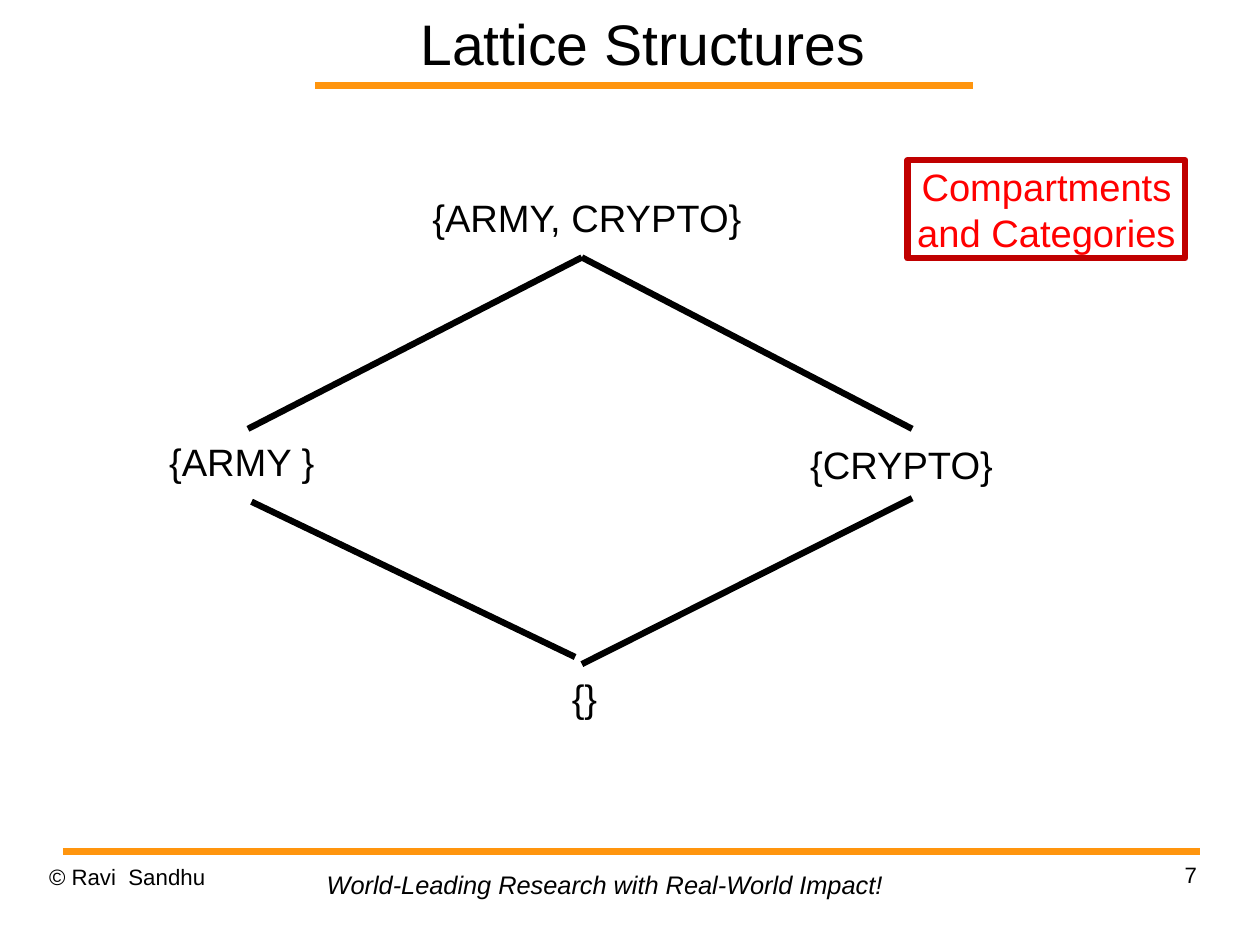
import pptx
import pptx.util
import pptx.dml.color
import pptx.enum.shapes
import pptx.enum.text
import pptx.oxml.ns
from lxml import etree

Cm, Pt = pptx.util.Cm, pptx.util.Pt
ALIGN = pptx.enum.text.PP_ALIGN
COLORS = {"text": "000000", "rule": "FF950E", "border": "C00000", "note": "FF0000"}
TIGHT = (0.18, 0.08)


def rgb(name):
    """Return the named palette colour."""
    return pptx.dml.color.RGBColor.from_string(COLORS[name])


def write(sp, lines, size, align, color="text", italic=False, inset=(0, 0),
          spacing=None, wrap=True, anchor="TOP"):
    """Fill a shape with one paragraph per line."""
    tf = sp.text_frame
    tf.word_wrap = wrap
    tf.vertical_anchor = pptx.enum.text.MSO_ANCHOR[anchor]
    tf.margin_left = tf.margin_right = Cm(inset[0])
    tf.margin_top = tf.margin_bottom = Cm(inset[1])
    for i, line in enumerate(lines):
        p = tf.add_paragraph() if i else tf.paragraphs[0]
        p.alignment = align
        if spacing:
            p.line_spacing = spacing
        r = p.add_run()
        r.text = line
        r.font.name = "Arial"
        r.font.size = Pt(size)
        r.font.italic = italic
        r.font.color.rgb = rgb(color)


def add_text(slide, box, text, size, align, **style):
    """Add a one-line text box."""
    sp = slide.shapes.add_textbox(*map(Cm, box))
    write(sp, [text], size, align, **style)


def add_line(slide, start, end, color, width):
    """Add a straight line without a shadow."""
    straight = pptx.enum.shapes.MSO_CONNECTOR.STRAIGHT
    ln = slide.shapes.add_connector(straight, *map(Cm, (*start, *end)))
    ln.line.color.rgb = rgb(color)
    ln.line.width = Pt(width)
    etree.SubElement(ln._element.spPr, pptx.oxml.ns.qn("a:effectLst"))


def add_title(slide, x, y, w, h):
    """Add the heading with the rule along its lower edge."""
    add_line(slide, (x + 0.89, y + h), (x + w - 0.83, y + h), "rule", 4.31)
    add_text(slide, (x, y, w, h), "Lattice Structures", 36, ALIGN.CENTER, anchor="MIDDLE")


def add_footer(slide, x, y, w, h):
    """Add the footer rule, copyright line, motto and page number."""
    add_line(slide, (x + 0.31, y), (x + w, y), "rule", 4.31)
    add_text(slide, (x, y + 0.26, 6.53, h), "© Ravi  Sandhu", 14, ALIGN.LEFT, spacing=1.01)
    add_text(slide, (x + w - 6.6, y + 0.21, 6.53, h), "7", 14, ALIGN.RIGHT, spacing=1.01)
    add_text(slide, (x + 5.92, y + 0.26, 12.9, 0.94),
             "World-Leading Research with Real-World Impact!", 16, ALIGN.LEFT,
             italic=True, inset=(0.25, 0.13), wrap=False)


def add_note(slide, x, y, w, h):
    """Add the framed note."""
    sp = slide.shapes.add_shape(pptx.enum.shapes.MSO_SHAPE.RECTANGLE, *map(Cm, (x, y, w, h)))
    sp.shadow.inherit = False
    sp.fill.background()
    sp.line.color.rgb = rgb("border")
    sp.line.width = Pt(4)
    write(sp, ["Compartments", "and Categories"], 24, ALIGN.CENTER, color="note",
          inset=TIGHT, wrap=False)


def add_lattice(slide, x, y, w, h):
    """Add the four label sets and the edges joining them."""
    mid = x + w / 2 + 0.03
    labels = [("{ARMY, CRYPTO}", x + 5.79, y, 7.65),
              ("{ARMY }", x, y + 5.41, 3.89),
              ("{CRYPTO}", x + w - 4.67, y + 5.47, 4.67),
              ("{}", x + 8.99, y + h - 1.17, 1.14)]
    for text, left, top, width in labels:
        add_text(slide, (left, top, width, 1.17), text, 24, ALIGN.CENTER,
                 inset=TIGHT, spacing=0.87, wrap=False)
    peak, right = (mid, y + 1.33), x + w - 2.1
    edges = [(peak, (x + 2.08, y + 5.14)),
             (peak, (right, y + 5.14)),
             ((x + 2.16, y + 6.76), (mid - 0.15, y + 10.21)),
             ((mid, y + 10.37), (right, y + 6.68))]
    for start, end in edges:
        add_line(slide, start, end, "text", 4)


def main():
    """Build and save the slide."""
    prs = pptx.Presentation()
    prs.slide_width, prs.slide_height = Cm(28), Cm(21)
    slide = prs.slides.add_slide(prs.slide_layouts[6])
    add_title(slide, 6.12, 0, 16.33, 1.9)
    add_footer(slide, 1.09, 18.92, 25.58, 1.45)
    add_note(slide, 20.17, 3.56, 6.17, 2.18)
    add_lattice(slide, 3.43, 4.39, 18.94, 11.82)
    prs.save("out.pptx")


if __name__ == "__main__":
    main()
